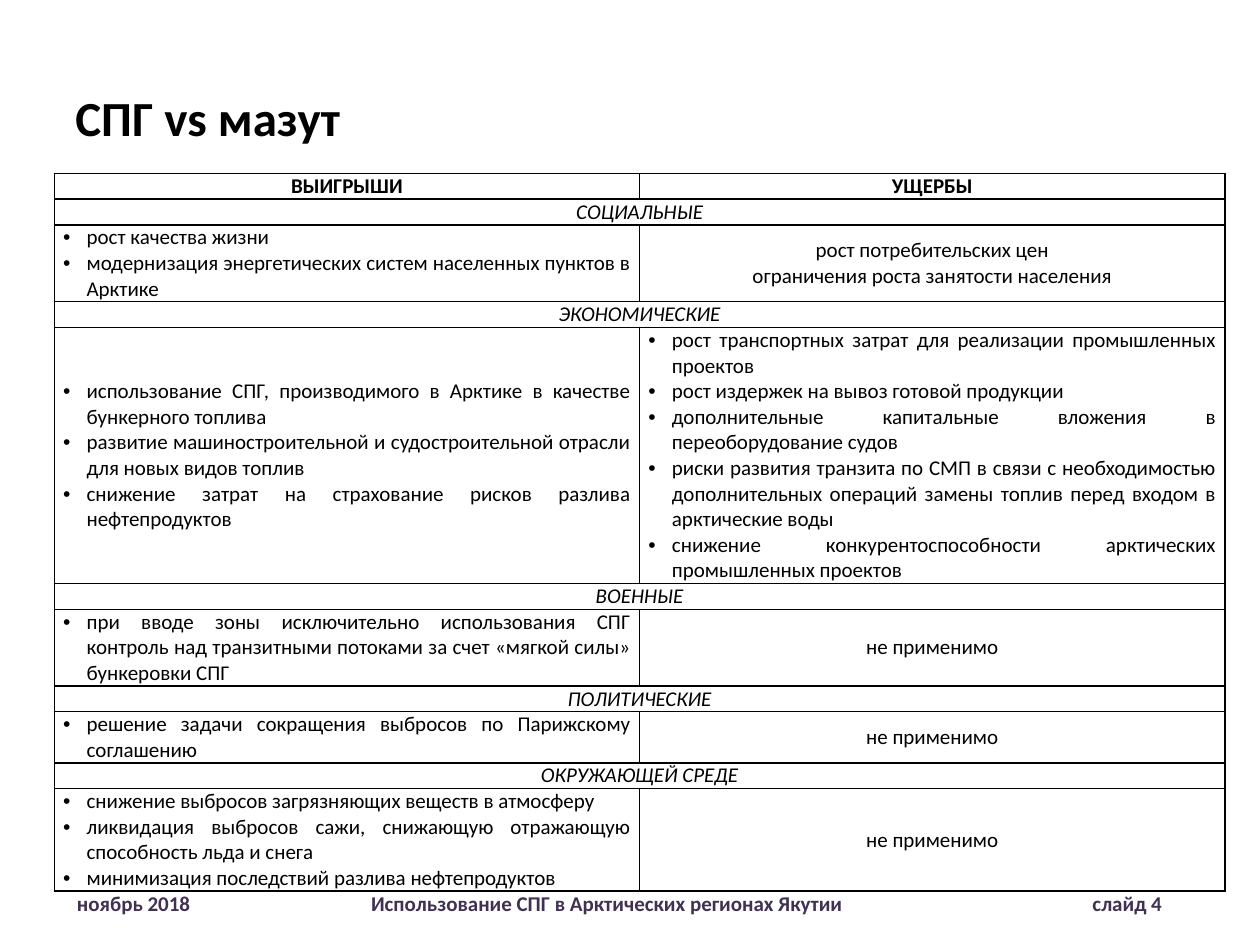
from lxml.etree import SubElement as Sub
from pptx import Presentation
from pptx.dml.color import RGBColor
from pptx.enum.text import MSO_ANCHOR as Anchor, PP_ALIGN as Align
from pptx.oxml.ns import qn
from pptx.util import Pt

BLACK = RGBColor(0x00, 0x00, 0x00)
PURPLE = RGBColor(0x40, 0x31, 0x52)
FONT = "Calibri"
LINE = 14.65  # height of one text line in the table

NONE = ["не применимо"]
HEADS = ["ВЫИГРЫШИ", "УЩЕРБЫ"]
# theme, gains, losses, losses are bulleted, lines of text
GROUPS = [
    ("СОЦИАЛЬНЫЕ",
     ["рост качества жизни",
      "модернизация энергетических систем населенных пунктов в Арктике"],
     ["рост потребительских цен",
      "ограничения роста занятости населения"], False, 3),
    ("ЭКОНОМИЧЕСКИЕ",
     ["использование СПГ, производимого в Арктике в качестве бункерного топлива",
      "развитие машиностроительной и судостроительной отрасли для новых видов топлив",
      "снижение затрат на страхование рисков разлива нефтепродуктов"],
     ["рост транспортных затрат для реализации промышленных проектов",
      "рост издержек на вывоз готовой продукции",
      "дополнительные капитальные вложения в переоборудование судов",
      "риски развития транзита по СМП в связи с необходимостью "
      "дополнительных операций замены топлив перед входом в арктические воды",
      "снижение конкурентоспособности арктических промышленных проектов"],
     True, 10),
    ("ВОЕННЫЕ",
     ["при вводе зоны исключительно использования СПГ контроль над "
      "транзитными потоками за счет «мягкой силы» бункеровки СПГ"],
     NONE, False, 3),
    ("ПОЛИТИЧЕСКИЕ",
     ["решение задачи сокращения выбросов по Парижскому соглашению"],
     NONE, False, 2),
    ("ОКРУЖАЮЩЕЙ СРЕДЕ",
     ["снижение выбросов загрязняющих веществ в атмосферу",
      "ликвидация выбросов сажи, снижающую отражающую способность льда и снега",
      "минимизация последствий разлива нефтепродуктов"],
     NONE, False, 4),
]


def style(par, size, color=BLACK, bold=False, italic=False):
    font = par.font
    font.name, font.size = FONT, Pt(size)
    font.bold, font.italic = bold, italic
    font.color.rgb = color


def bullet(par):
    props = par._p.get_or_add_pPr()
    props.set("marL", str(Pt(13.5)))
    props.set("indent", str(Pt(-13.5)))
    Sub(props, qn("a:buFont"), typeface="Arial")
    Sub(props, qn("a:buChar"), char="•")


def border(cell):
    props = cell._tc.get_or_add_tcPr()
    for side in ("lnL", "lnR", "lnT", "lnB"):
        edge = Sub(props, qn("a:" + side), w=str(Pt(1)))
        fill = Sub(edge, qn("a:solidFill"))
        Sub(fill, qn("a:srgbClr"), val=str(BLACK))


def fill_cell(cell, items, bullets=False, bold=False, italic=False):
    cell.margin_left = cell.margin_right = Pt(5)
    cell.margin_top = cell.margin_bottom = 0
    cell.vertical_anchor = Anchor.MIDDLE
    frame = cell.text_frame
    frame.text = "\n".join(items)
    for par in frame.paragraphs:
        par.alignment = Align.JUSTIFY if bullets else Align.CENTER
        if bullets:
            bullet(par)
        style(par, 12, bold=bold, italic=italic)


def add_text(slide, box, text, anchor):
    frame = slide.shapes.add_textbox(*map(Pt, box)).text_frame
    frame.word_wrap = True
    frame.vertical_anchor = anchor
    frame.text = text
    return frame.paragraphs[0]


def add_title(slide, box):
    style(add_text(slide, box, "СПГ vs мазут", Anchor.MIDDLE), 28, bold=True)


def add_grid(slide, box):
    lines = [1]
    for group in GROUPS:
        lines += [1, group[-1]]
    left, top, width = box
    table = slide.shapes.add_table(
        len(lines), 2, Pt(left), Pt(top), Pt(width), Pt(LINE * sum(lines))).table
    table.first_row = table.horz_banding = False
    for row, count in zip(table.rows, lines):
        row.height = Pt(LINE * count)
    for cell in table.iter_cells():
        border(cell)
        cell.fill.background()

    # Column heads
    for col, head in enumerate(HEADS):
        fill_cell(table.cell(0, col), [head], bold=True)

    # A merged theme row, then gains against losses
    for idx, (theme, gains, losses, listed, _) in enumerate(GROUPS):
        row = 1 + 2 * idx
        table.cell(row, 0).merge(table.cell(row, 1))
        fill_cell(table.cell(row, 0), [theme], italic=True)
        fill_cell(table.cell(row + 1, 0), gains, bullets=True)
        fill_cell(table.cell(row + 1, 1), losses, bullets=listed)


def add_footer(slide, box):
    parts = ["ноябрь 2018", "Использование СПГ в Арктических регионах Якутии",
             "слайд 4"]
    par = add_text(slide, box, "\t".join(parts), Anchor.BOTTOM)
    tabs = Sub(par._p.get_or_add_pPr(), qn("a:tabLst"))
    for pos, algn in ((168, "l"), (620, "r")):
        Sub(tabs, qn("a:tab"), pos=str(Pt(pos)), algn=algn)
    style(par, 12, PURPLE, bold=True)


def main():
    deck = Presentation()
    deck.slide_width, deck.slide_height = Pt(720), Pt(540)
    slide = deck.slides.add_slide(deck.slide_layouts[6])
    add_footer(slide, (36.9, 491, 646.5, 36))
    add_title(slide, (36, 21.6, 648, 90))
    add_grid(slide, (31, 99.2, 669))
    deck.save("out.pptx")


if __name__ == "__main__":
    main()
